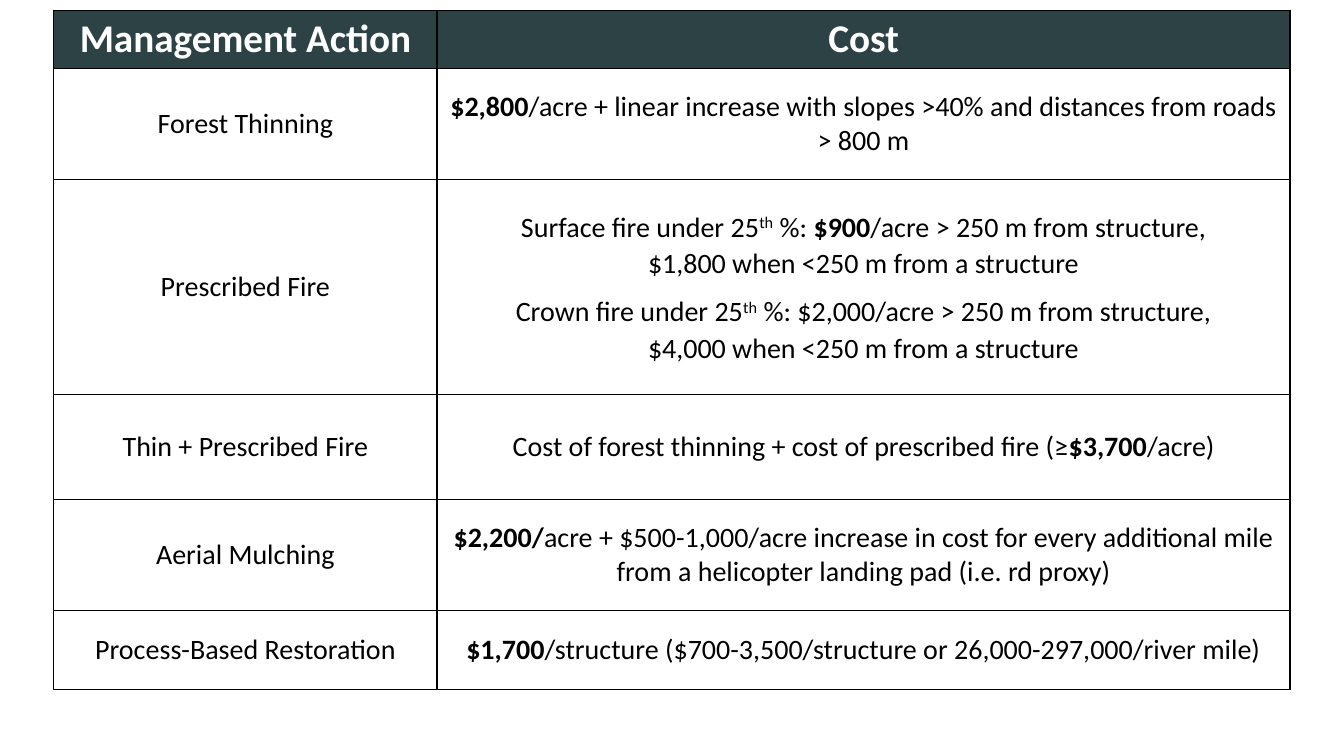
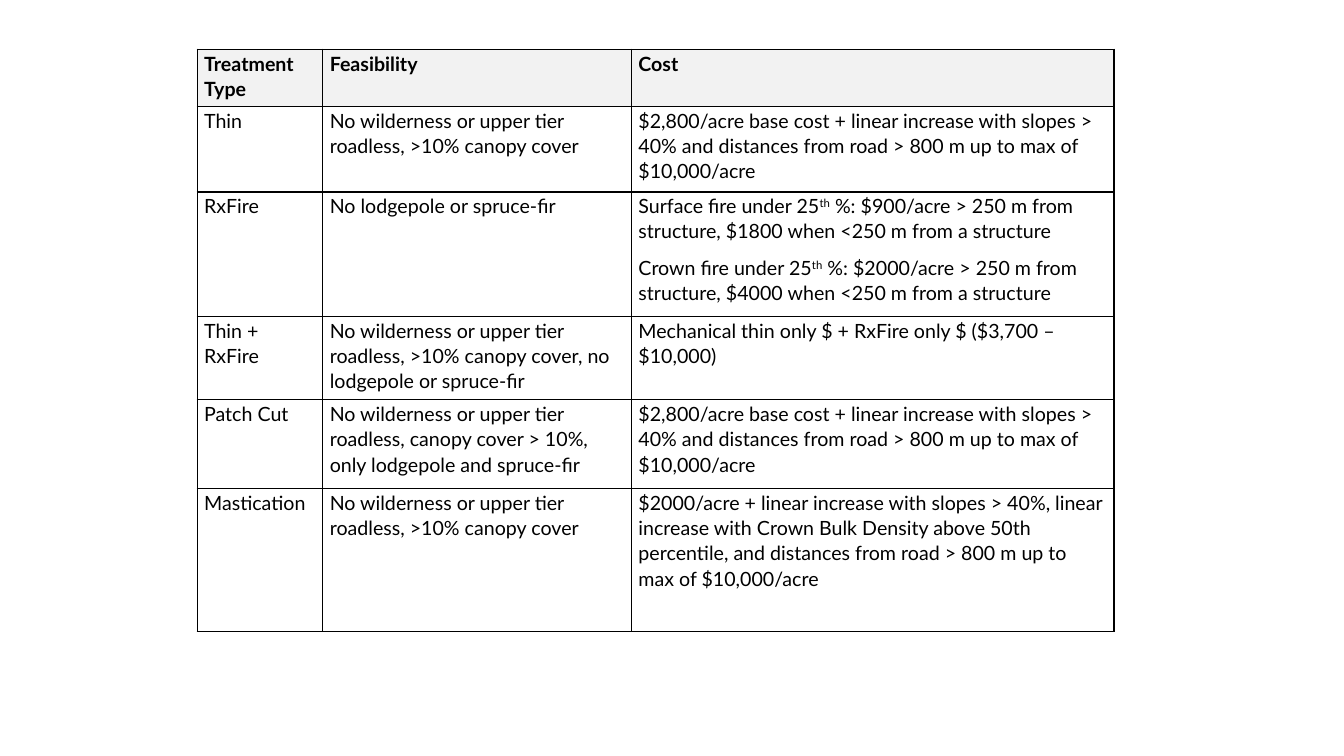
import pptx
import pptx.util
import pptx.dml.color
import pptx.enum.text
import lxml.etree

Pt = pptx.util.Pt
ALIGN = pptx.enum.text.PP_ALIGN
ANCHOR = pptx.enum.text.MSO_ANCHOR
BORDER_COLOR = "000000"
BOLD_MARK = "*"
SUPERSCRIPT_MARK = "^"
NO_BREAK_SPACE = chr(160)
DRAWING = "http://schemas.openxmlformats.org/drawingml/2006/main"


def color(value):
    return pptx.dml.color.RGBColor.from_string(value)


def add_borders(cell):
    properties = cell._tc.get_or_add_tcPr()
    for side in ("lnL", "lnR", "lnT", "lnB"):
        line = lxml.etree.SubElement(properties, f"{{{DRAWING}}}{side}", w=str(Pt(1)))
        fill = lxml.etree.SubElement(line, f"{{{DRAWING}}}solidFill")
        lxml.etree.SubElement(fill, f"{{{DRAWING}}}srgbClr", val=BORDER_COLOR)


spaced = {"line_spacing": 1.07, "space_after": Pt(8)}
standard_margins = {"margin_left": Pt(7.2), "margin_right": Pt(7.2),
                    "margin_top": Pt(3.6), "margin_bottom": Pt(3.6)}
fire_margins = {"margin_left": Pt(8.64), "margin_right": Pt(8.64),
                "margin_top": Pt(0), "margin_bottom": Pt(0)}
tight_margins = {"margin_left": Pt(5), "margin_right": Pt(5),
                 "margin_top": Pt(0.7), "margin_bottom": Pt(0)}
thinning_cost = ("$2,800/acre base cost + linear increase with slopes > 40% and "
                 "distances from road > 800 m up to max of $10,000/acre")

tables = [
    {
        "position": (38.4, 7.5),
        "widths": (273.8, 609.3),
        "heights": (41, 79.5, 153.3, 75, 79.3, 56.7),
        "header_fill": "2C4244",
        "header_font": {"name": "Calibri", "size": Pt(28), "bold": True},
        "header_color": "FFFFFF",
        "header_anchor": ANCHOR.TOP,
        "body_font": {"name": "Calibri", "size": Pt(20), "bold": False},
        "body_anchor": ANCHOR.MIDDLE,
        "margins": standard_margins,
        "paragraph": {"alignment": ALIGN.CENTER},
        "special_cells": {(2, 1): (fire_margins, spaced)},
        "rows": [
            ("Management Action", "Cost"),
            ("Forest Thinning",
             "*$2,800*/acre + linear increase with slopes >40% and distances from roads > 800 m"),
            ("Prescribed Fire",
             "Surface fire under 25^th^ %: *$900*/acre > 250 m from structure, "
             f"$1,800{NO_BREAK_SPACE}when <250 m from a structure\n"
             "Crown fire under 25^th^ %: $2,000/acre > 250 m from structure, "
             f"$4,000{NO_BREAK_SPACE}when <250 m from a structure"),
            ("Thin + Prescribed Fire",
             "Cost of forest thinning + cost of prescribed fire (≥*$3,700*/acre)"),
            ("Aerial Mulching",
             "*$2,200/*acre + $500-1,000/acre increase in cost for every additional mile "
             "from a helicopter landing pad (i.e. rd proxy)"),
            ("Process-Based Restoration",
             "*$1,700*/structure ($700-3,500/structure or 26,000-297,000/river mile)"),
        ],
    },
    {
        "position": (140.8, 35.2),
        "widths": (89.8, 220.5, 344.7),
        "heights": (41, 60.9, 89, 59.5, 63.5, 102.2),
        "header_fill": "F2F2F2",
        "header_font": {"name": "Lato", "size": Pt(14), "bold": True},
        "header_color": "000000",
        "header_anchor": ANCHOR.TOP,
        "body_font": {"name": "Lato", "size": Pt(14), "bold": False},
        "body_anchor": ANCHOR.TOP,
        "margins": tight_margins,
        "paragraph": {"alignment": ALIGN.LEFT, **spaced},
        "special_cells": {},
        "rows": [
            ("Treatment Type", "Feasibility", "Cost"),
            ("Thin", "No wilderness or upper tier roadless, >10% canopy cover", thinning_cost),
            ("RxFire", "No lodgepole or spruce-fir",
             "Surface fire under 25^th^ %: $900/acre > 250 m from structure, "
             f"$1800{NO_BREAK_SPACE}when <250 m from a structure\n"
             "Crown fire under 25^th^ %: $2000/acre > 250 m from structure, "
             f"$4000{NO_BREAK_SPACE}when <250 m from a structure"),
            ("Thin + RxFire",
             "No wilderness or upper tier roadless, >10% canopy cover, no lodgepole or spruce-fir",
             "Mechanical thin only $ + RxFire only $ ($3,700 – $10,000)"),
            ("Patch Cut",
             "No wilderness or upper tier roadless, canopy cover > 10%, "
             "only lodgepole and spruce-fir",
             thinning_cost),
            ("Mastication", "No wilderness or upper tier roadless, >10% canopy cover",
             "$2000/acre + linear increase with slopes > 40%, linear increase with "
             "Crown Bulk Density above 50th percentile, and distances from road > 800 m "
             "up to max of $10,000/acre"),
        ],
    },
]

presentation = pptx.Presentation()
presentation.slide_width = Pt(960)
presentation.slide_height = Pt(540)

for design in tables:
    slide = presentation.slides.add_slide(presentation.slide_layouts[6])
    left, top = design["position"]
    widths, heights = design["widths"], design["heights"]
    table = slide.shapes.add_table(len(heights), len(widths), Pt(left), Pt(top),
                                   Pt(sum(widths)), Pt(sum(heights))).table
    table.first_row = False
    table.horz_banding = False
    for column, width in zip(table.columns, widths):
        column.width = Pt(width)
    for row, height in zip(table.rows, heights):
        row.height = Pt(height)

    for row_index, texts in enumerate(design["rows"]):
        part = "body" if row_index else "header"
        font_color = design["header_color"] if part == "header" else "000000"
        for column_index, text in enumerate(texts):
            cell = table.cell(row_index, column_index)
            margins, spacing = design["special_cells"].get(
                (row_index, column_index), (design["margins"], {}))
            cell_format = {**margins, "vertical_anchor": design[f"{part}_anchor"]}
            for name, value in cell_format.items():
                setattr(cell, name, value)
            add_borders(cell)
            if part == "header":
                cell.fill.solid()
                cell.fill.fore_color.rgb = color(design["header_fill"])
            else:
                cell.fill.background()

            for line_index, line in enumerate(text.split("\n")):
                frame = cell.text_frame
                paragraph = frame.add_paragraph() if line_index else frame.paragraphs[0]
                for name, value in {**design["paragraph"], **spacing}.items():
                    setattr(paragraph, name, value)
                for bold_index, phrase in enumerate(line.split(BOLD_MARK)):
                    for raised_index, words in enumerate(phrase.split(SUPERSCRIPT_MARK)):
                        if not words:
                            continue
                        run = paragraph.add_run()
                        run.text = words
                        for name, value in design[f"{part}_font"].items():
                            setattr(run.font, name, value)
                        run.font.color.rgb = color(font_color)
                        if bold_index % 2:
                            run.font.bold = True
                        if raised_index % 2:
                            run._r.get_or_add_rPr().set("baseline", "30000")

presentation.save("out.pptx")
